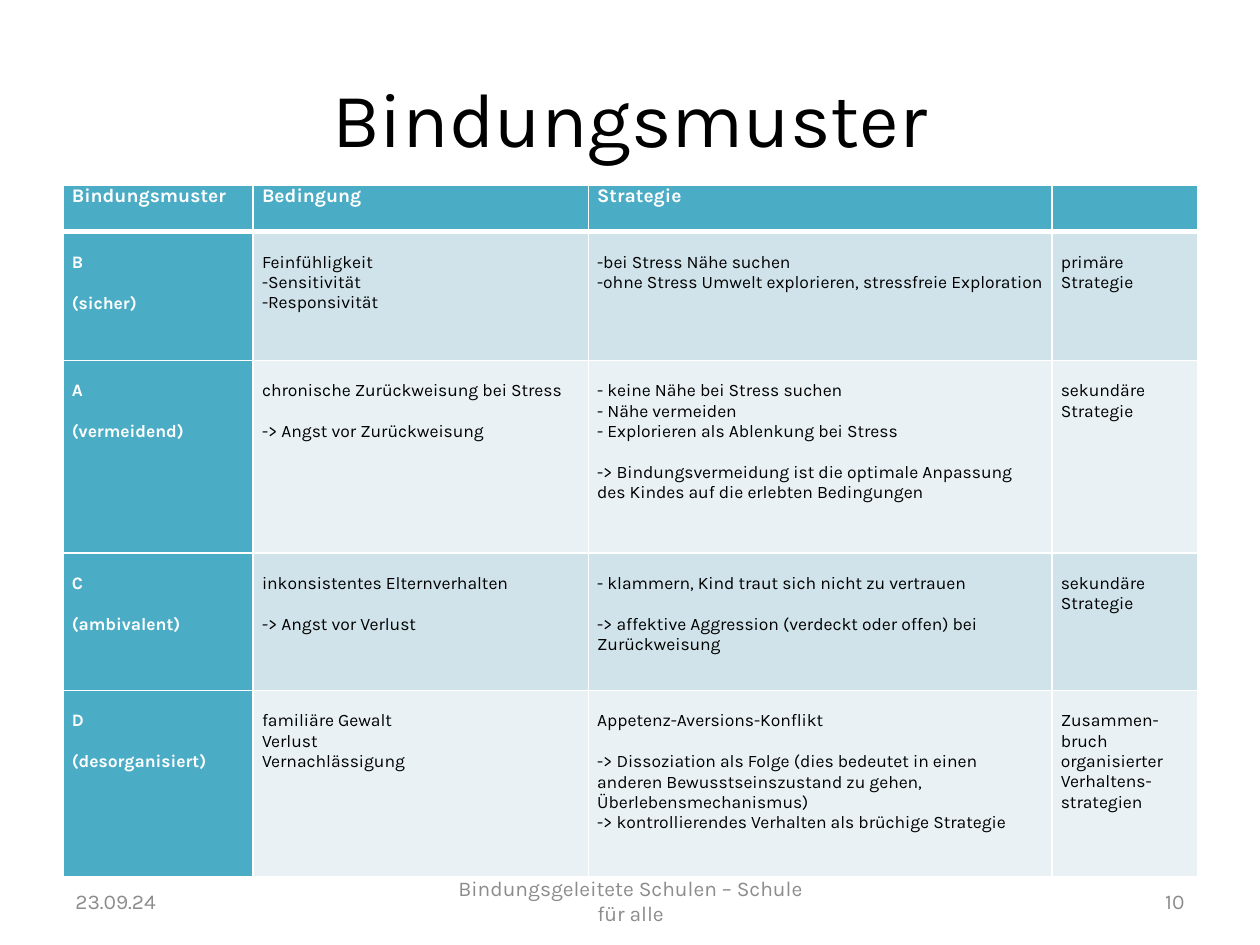
from lxml.etree import SubElement
from pptx import Presentation
from pptx.dml.color import RGBColor
from pptx.enum.text import MSO_ANCHOR, PP_ALIGN
from pptx.oxml.ns import qn
from pptx.util import Inches, Pt

HUES = {"ink": "000000", "white": "FFFFFF", "teal": "4BACC6",
        "blue": "D0E3EA", "pale": "E9F1F5", "grey": "8C8C8C"}
LINE = 11.7


def write(frame, text, size=10, hue="ink", bold=False, align=PP_ALIGN.LEFT,
          anchor=MSO_ANCHOR.MIDDLE):
    frame.word_wrap = True
    frame.vertical_anchor = anchor
    para = frame.paragraphs[0]
    for i, block in enumerate(text.split("\n\n")):
        for j, line in enumerate(block.split("\n")):
            if i or j:
                para = frame.add_paragraph()
            if i and not j:
                para.space_before = Pt(LINE)
            para.alignment = align
            para.font.size = Pt(size)
            if line:
                run = para.add_run()
                run.text = line
                run.font.name = "Karla"
                run.font.size = Pt(size)
                run.font.bold = bold
                run.font.color.rgb = RGBColor.from_string(HUES[hue])


def edge(cell, side, width):
    line = SubElement(cell._tc.get_or_add_tcPr(), qn("a:" + side), w=str(Pt(width)))
    fill = SubElement(line, qn("a:solidFill"))
    SubElement(fill, qn("a:srgbClr"), val=HUES["white"])


deck = Presentation()
deck.slide_width, deck.slide_height = Inches(10), Inches(7.5)
W, H = deck.slide_width, deck.slide_height
slide = deck.slides.add_slide(deck.slide_layouts[5])

title = slide.shapes.title
title.left, title.top = int(W * 0.05), int(H * 0.04)
title.width, title.height = int(W * 0.9), int(H / 6)
write(title.text_frame, "Bindungsmuster", size=44, align=PP_ALIGN.CENTER)

cols = [1.51, 2.66, 3.68, 1.16]
rows = [0.37, 1.02, 1.53, 1.09, 1.48]
cells = [
    ["Bindungsmuster", "Bedingung", "Strategie", ""],
    ["B\n\n(sicher)",
     "Feinfühligkeit\n-Sensitivität\n-Responsivität",
     "-bei Stress Nähe suchen\n"
     "-ohne Stress Umwelt explorieren, stressfreie Exploration",
     "primäre\nStrategie"],
    ["A\n\n(vermeidend)",
     "chronische Zurückweisung bei Stress\n\n-> Angst vor Zurückweisung",
     "- keine Nähe bei Stress suchen\n- Nähe vermeiden\n"
     "- Explorieren als Ablenkung bei Stress\n\n"
     "-> Bindungsvermeidung ist die optimale Anpassung des Kindes "
     "auf die erlebten Bedingungen",
     "sekundäre\nStrategie"],
    ["C\n\n(ambivalent)",
     "inkonsistentes Elternverhalten\n\n-> Angst vor Verlust",
     "- klammern, Kind traut sich nicht zu vertrauen\n\n"
     "-> affektive Aggression (verdeckt oder offen) bei Zurückweisung",
     "sekundäre\nStrategie"],
    ["D\n\n(desorganisiert)",
     "familiäre Gewalt\nVerlust\nVernachlässigung",
     "Appetenz-Aversions-Konflikt\n\n"
     "-> Dissoziation als Folge (dies bedeutet in einen anderen "
     "Bewusstseinszustand zu gehen, Überlebensmechanismus)\n"
     "-> kontrollierendes Verhalten als brüchige Strategie",
     "Zusammen-bruch organisierter Verhaltens-strategien"],
]
table = slide.shapes.add_table(
    len(rows), len(cols), int(W * 0.05), Inches(1.47),
    Inches(sum(cols)), Inches(sum(rows))).table
for col, wide in zip(table.columns, cols):
    col.width = Inches(wide)
for r, (row, high) in enumerate(zip(table.rows, rows)):
    row.height = Inches(high)
    for c, text in enumerate(cells[r]):
        cell = row.cells[c]
        cell.margin_left = cell.margin_right = Inches(0.07)
        cell.margin_top = Pt(LINE if r else 0)
        cell.margin_bottom = 0
        head = r == 0 or c == 0
        for side in ("lnL", "lnR", "lnT", "lnB"):
            thick = (r, side) in ((0, "lnB"), (1, "lnT"))
            edge(cell, side, 3 if thick else 1)
        cell.fill.solid()
        tint = "teal" if head else "blue" if r % 2 else "pale"
        cell.fill.fore_color.rgb = RGBColor.from_string(HUES[tint])
        write(cell.text_frame, text, size=10 if r else 11, bold=head,
              hue="white" if head else "ink", anchor=MSO_ANCHOR.TOP)
        cell.vertical_anchor = MSO_ANCHOR.TOP

for left, wide, text, align in (
        (0.05, 0.233, "23.09.24", PP_ALIGN.LEFT),
        (0.717, 0.233, "10", PP_ALIGN.RIGHT),
        (0.342, 0.317, "Bindungsgeleitete Schulen – Schule für alle", PP_ALIGN.CENTER)):
    box = slide.shapes.add_textbox(
        int(W * left), int(H * 0.927), int(W * wide), int(H * 0.053))
    write(box.text_frame, text, size=12, hue="grey", align=align)

deck.save("out.pptx")
